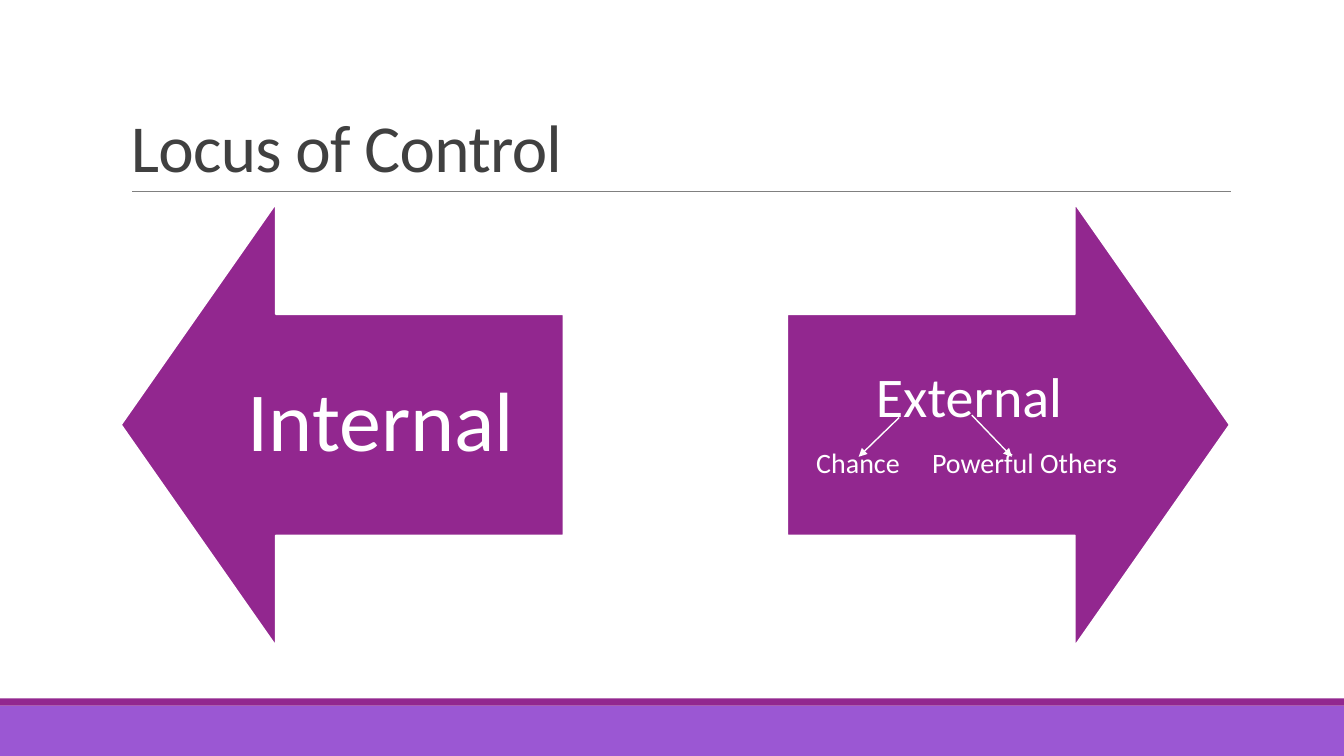
"""Build the Locus of Control slide with two opposed arrows."""
from typing import NamedTuple

from lxml import etree
from pptx import Presentation
from pptx.dml.color import RGBColor
from pptx.enum import shapes, text
from pptx.oxml import ns
from pptx.util import Cm, Pt

PURPLE, VIOLET, WHITE = "92278F", "9B57D3", "FFFFFF"
GREY, DARK = "808080", "404040"
FONT = "Calibri"


class Block(NamedTuple):
    kind: shapes.MSO_SHAPE
    left: float
    top: float
    width: float
    height: float
    fill: str
    line: str | None = None


class Line(NamedTuple):
    x1: float
    y1: float
    x2: float
    y2: float
    color: str
    weight: float
    arrow: bool = False


BLOCKS = [
    Block(shapes.MSO_SHAPE.RECTANGLE, 0, 17.78, 33.87, 1.27, VIOLET),
    Block(shapes.MSO_SHAPE.RECTANGLE, 0, 17.6, 33.87, 0.18, PURPLE),
    Block(shapes.MSO_SHAPE.LEFT_ARROW, 3.05, 5.13, 11.15, 11.15, PURPLE, WHITE),
    Block(shapes.MSO_SHAPE.RIGHT_ARROW, 19.84, 5.13, 11.15, 11.15, PURPLE, WHITE),
]
LINES = [
    Line(3.33, 4.83, 31.01, 4.83, GREY, 0.5),
    Line(22.66, 10.52, 21.64, 11.51, WHITE, 1, True),
    Line(24.49, 10.46, 25.5, 11.51, WHITE, 1, True),
]


def rgb(color: str) -> RGBColor:
    return RGBColor.from_string(color)


def add_block(s, b: Block) -> None:
    sp = s.shapes.add_shape(b.kind, Cm(b.left), Cm(b.top), Cm(b.width), Cm(b.height))
    sp.shadow.inherit = False
    sp.fill.solid()
    sp.fill.fore_color.rgb = rgb(b.fill)
    if b.line:
        sp.line.color.rgb = rgb(b.line)
        sp.line.width = Pt(1.25)
        sp.adjustments[0], sp.adjustments[1] = 0.5, 0.35
    else:
        sp.line.fill.background()


def add_line(s, ln: Line) -> None:
    c = s.shapes.add_connector(
        shapes.MSO_CONNECTOR.STRAIGHT, Cm(ln.x1), Cm(ln.y1), Cm(ln.x2), Cm(ln.y2))
    c.line.color.rgb = rgb(ln.color)
    c.line.width = Pt(ln.weight)
    if ln.arrow:
        etree.SubElement(c.line._get_or_add_ln(), ns.qn("a:tailEnd"), type="triangle")
    etree.SubElement(c._element.spPr, ns.qn("a:effectLst"))


def add_frame(s, left: float, top: float, width: float, height: float, *,
              anchor=text.MSO_ANCHOR.MIDDLE, inset: float = 0.25):
    tf = s.shapes.add_textbox(Cm(left), Cm(top), Cm(width), Cm(height)).text_frame
    tf.word_wrap = True
    tf.vertical_anchor = anchor
    tf.margin_left = tf.margin_right = Cm(inset)
    tf.margin_top = tf.margin_bottom = Cm(min(inset, 0.8))
    return tf


def write(p, words: str, *, size: float, color: str = WHITE, align=text.PP_ALIGN.CENTER,
          spacing: float = 0.9, after: float = 0, tab: float = 0, kern: int = 0) -> None:
    p.alignment = align
    p.line_spacing = spacing
    p.space_after = Pt(after)
    if tab:
        tabs = etree.SubElement(p._p.get_or_add_pPr(), ns.qn("a:tabLst"))
        etree.SubElement(tabs, ns.qn("a:tab"), pos=str(Cm(tab)), algn="l")
    r = p.add_run()
    r.text = words
    r.font.name = FONT
    r.font.size = Pt(size)
    r.font.color.rgb = rgb(color)
    if kern:
        r._r.get_or_add_rPr().set("spc", str(kern))


def main() -> None:
    prs = Presentation()
    prs.slide_width, prs.slide_height = Cm(33.87), Cm(19.05)
    s = prs.slides.add_slide(prs.slide_layouts[6])

    for b in BLOCKS:
        add_block(s, b)

    title = add_frame(s, 3.05, 0.79, 27.94, 4.04, anchor=text.MSO_ANCHOR.BOTTOM, inset=0.25)
    title.margin_top = title.margin_bottom = Cm(0.13)
    write(title.paragraphs[0], "Locus of Control", size=48, color=DARK,
          align=text.PP_ALIGN.LEFT, spacing=0.85, kern=-50)

    internal = add_frame(s, 5, 7.92, 9.2, 5.56, inset=0.8)
    write(internal.paragraphs[0], "Internal", size=60)

    external = add_frame(s, 19.81, 7.92, 9.22, 5.56, inset=0.76)
    write(external.paragraphs[0], "External", size=40, after=14)
    write(external.add_paragraph(), "Chance\tPowerful Others", size=20,
          align=text.PP_ALIGN.LEFT, tab=2.92)

    for ln in LINES:
        add_line(s, ln)

    prs.save("out.pptx")


if __name__ == "__main__":
    main()
